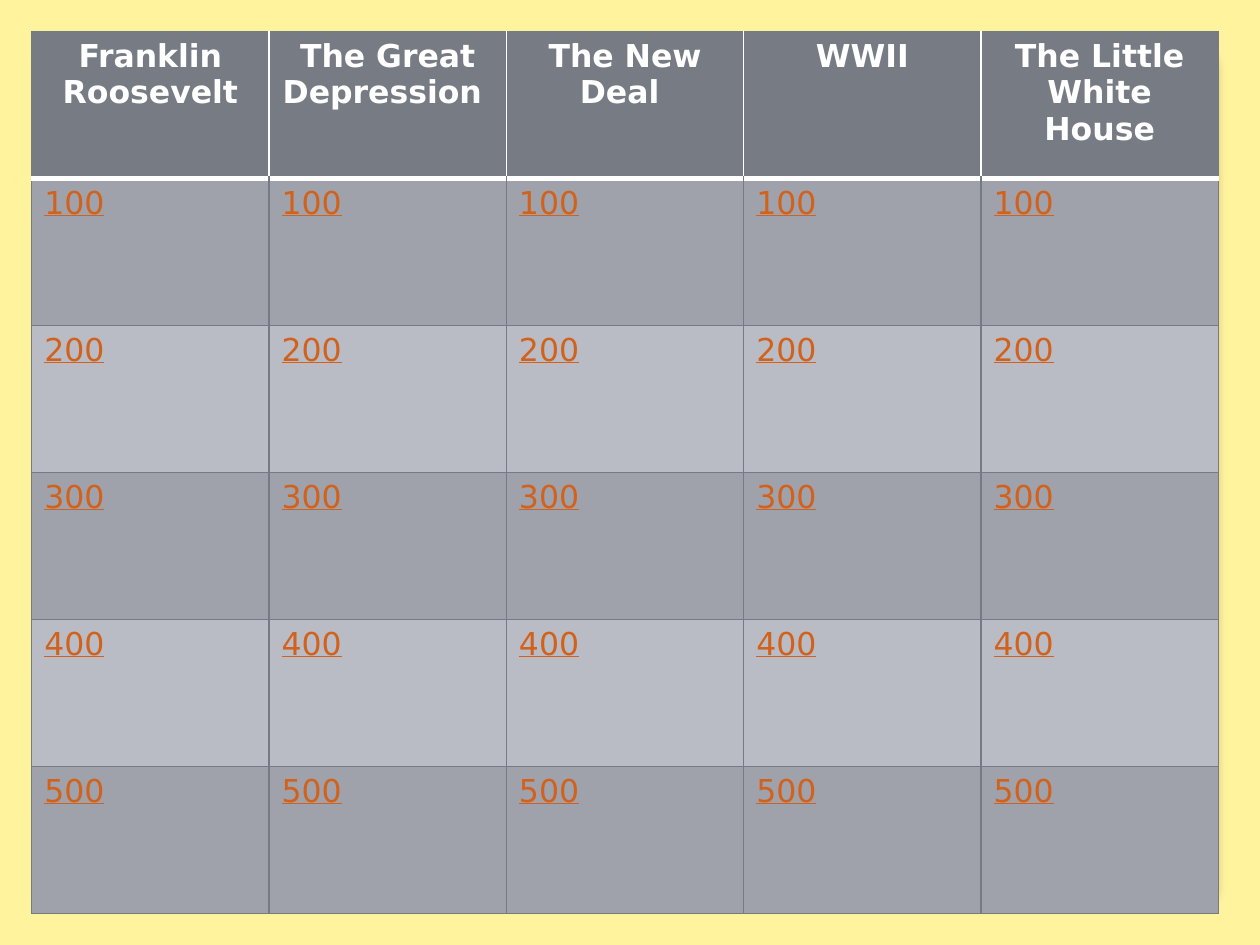
"""Build a quiz board slide with five categories and five point levels."""
from lxml.etree import SubElement
from pptx import Presentation
from pptx.dml.color import RGBColor
from pptx.enum.shapes import MSO_SHAPE as Preset
from pptx.enum.text import PP_ALIGN as Align
from pptx.oxml.ns import qn
from pptx.util import Cm, Pt

CATEGORIES = ["Franklin Roosevelt", "The Great Depression ", "The New Deal ",
              "WWII", "The Little White House"]
POINTS = ["100", "200", "300", "400", "500"]

FONT = "DejaVu Sans"
CREAM = RGBColor(0xFF, 0xF3, 0x9D)
WHITE = RGBColor(0xFF, 0xFF, 0xFF)
BLACK = RGBColor(0x00, 0x00, 0x00)
PANEL_EDGE = RGBColor(0xA4, 0xA4, 0xA4)
HEADER_GRAY = RGBColor(0x77, 0x7C, 0x84)
BAND_GRAYS = [RGBColor(0x9F, 0xA2, 0xAB), RGBColor(0xB9, 0xBC, 0xC5)]
GRID_GRAY = RGBColor(0x74, 0x7B, 0x87)
ORANGE = RGBColor(0xD2, 0x61, 0x1C)

BOARD_LEFT = BOARD_TOP = Cm(0.64)
BOARD_WIDTH, BOARD_HEIGHT = Cm(23.92), Cm(17.78)
GRID_LINE = (GRID_GRAY, Pt(0.75))
HEADER_LINE = (WHITE, Pt(3.35))


def add_panel(slide):
    panel = slide.shapes.add_shape(Preset.ROUNDED_RECTANGLE, Cm(0.84), Cm(0.91),
                                   Cm(23.7), Cm(17.22))
    panel.adjustments[0] = 0.02
    panel.fill.solid()
    panel.fill.fore_color.rgb = WHITE
    panel.line.color.rgb = PANEL_EDGE
    panel.line.width = Pt(0.16)
    panel.shadow.inherit = False
    effects = panel._element.spPr.find(qn("a:effectLst"))
    shadow = SubElement(effects, qn("a:outerShdw"), blurRad=str(Pt(6)),
                        dist=str(Pt(4)), dir="5400000", rotWithShape="0")
    color = SubElement(shadow, qn("a:srgbClr"), val=str(BLACK))
    SubElement(color, qn("a:alpha"), val="25000")


def set_borders(cell, borders):
    properties = cell._tc.get_or_add_tcPr()
    for side in "LRTB":
        if side in borders:
            color, width = borders[side]
            line = SubElement(properties, qn(f"a:ln{side}"), w=str(width))
            fill = SubElement(line, qn("a:solidFill"))
            SubElement(fill, qn("a:srgbClr"), val=str(color))


def borders_for(row, column):
    if row > 0:
        borders = dict.fromkeys("LRTB", GRID_LINE)
        if row == 1:
            borders["T"] = HEADER_LINE
        return borders
    borders = {"T": GRID_LINE, "B": HEADER_LINE}
    if column == 0:
        borders["L"] = GRID_LINE
    if column == len(CATEGORIES) - 1:
        borders["R"] = GRID_LINE
    return borders


def fill_cell(cell, text, row, column):
    is_header = row == 0
    set_borders(cell, borders_for(row, column))
    cell.fill.solid()
    cell.fill.fore_color.rgb = HEADER_GRAY if is_header else BAND_GRAYS[(row - 1) % 2]
    cell.text_frame.text = text
    paragraph = cell.text_frame.paragraphs[0]
    paragraph.alignment = Align.CENTER if is_header else Align.LEFT
    font = paragraph.runs[0].font
    font.name, font.size = FONT, Pt(18)
    font.bold, font.underline = is_header, not is_header
    font.color.rgb = WHITE if is_header else ORANGE


def add_board(slide):
    rows = [CATEGORIES] + [[points] * len(CATEGORIES) for points in POINTS]
    table = slide.shapes.add_table(len(rows), len(CATEGORIES), BOARD_LEFT, BOARD_TOP,
                                   BOARD_WIDTH, BOARD_HEIGHT).table
    for row, texts in enumerate(rows):
        for column, text in enumerate(texts):
            fill_cell(table.cell(row, column), text, row, column)


def main():
    presentation = Presentation()
    presentation.slide_width, presentation.slide_height = Cm(25.4), Cm(19.05)
    slide = presentation.slides.add_slide(presentation.slide_layouts[6])
    slide.background.fill.solid()
    slide.background.fill.fore_color.rgb = CREAM
    add_panel(slide)
    add_board(slide)
    presentation.save("out.pptx")


if __name__ == "__main__":
    main()
